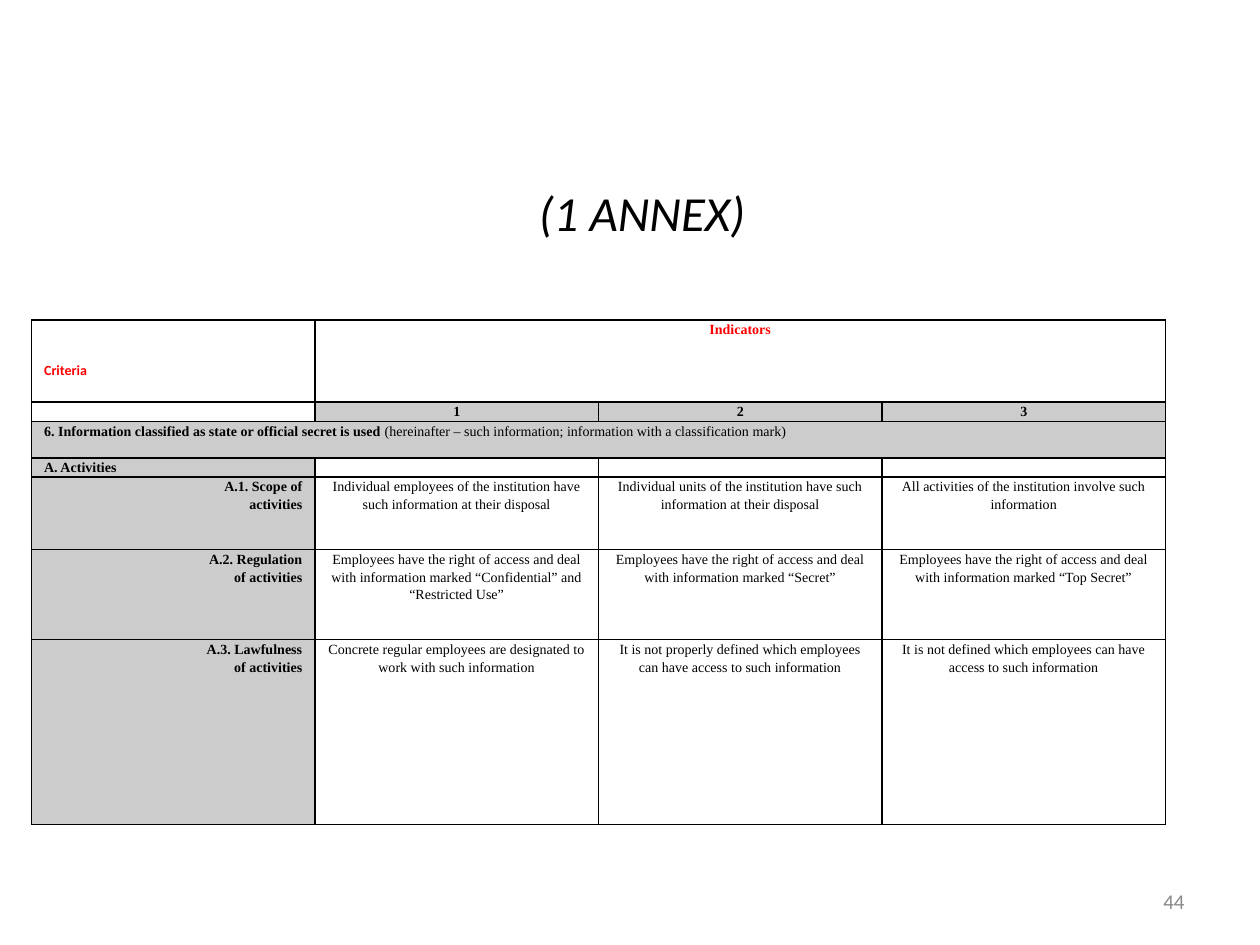
from lxml import etree
from pptx import Presentation
from pptx.dml.color import RGBColor
from pptx.enum.text import MSO_ANCHOR, PP_ALIGN
from pptx.oxml.ns import qn
from pptx.util import Pt

LEFT, CENTER, RIGHT = PP_ALIGN.LEFT, PP_ALIGN.CENTER, PP_ALIGN.RIGHT
MIDDLE = MSO_ANCHOR.MIDDLE
COLORS = {"text": "000000", "heading": "FF0000", "band": "CCCCCC", "number": "898989"}
SERIF, SANS = "Times New Roman", "Calibri"
CELL_SIZE = 8
CRITERIA_DROP = 22.5
COLUMN_WIDTH = 162
ROW_HEIGHTS = [46.8, 10.2, 20.9, 10.2, 41.3, 51.6, 105.7]
FIRST_ACTIVITY_ROW = 4

SECTION = "6. Information classified as state or official secret is used "
SECTION_NOTE = "(hereinafter – such information; information with a classification mark)"
ACTIVITIES = [
    (["A.1. Scope of", "activities"],
     "Individual employees of the institution have such information at their disposal",
     "Individual units of the institution have such information at their disposal",
     "All activities of the institution involve such information"),
    (["A.2. Regulation", "of activities"],
     "Employees have the right of access and deal with information marked "
     "“Confidential” and “Restricted Use”",
     "Employees have the right of access and deal with information marked “Secret”",
     "Employees have the right of access and deal with information marked “Top Secret”"),
    (["A.3. Lawfulness", "of activities"],
     "Concrete regular employees are designated to work with such information",
     "It is not properly defined which employees can have access to such information",
     "It is not defined which employees can have access to such information"),
]


def rgb(name):
    return RGBColor.from_string(COLORS[name])


def write(paragraph, text, font=SERIF, size=CELL_SIZE, color="text",
          bold=False, italic=False, align=LEFT, spacing=None):
    """Append a formatted run to the paragraph."""
    run = paragraph.add_run()
    run.text = text
    run.font.name = font
    run.font.size = Pt(size)
    run.font.bold = bold
    run.font.italic = italic
    run.font.color.rgb = rgb(color)
    paragraph.alignment = align
    if spacing:
        paragraph.line_spacing = spacing


def write_cell(cell, *lines, **style):
    frame = cell.text_frame
    for index, line in enumerate(lines):
        paragraph = frame.add_paragraph() if index else frame.paragraphs[0]
        write(paragraph, line, spacing=1.15, **style)


def shade(cell):
    cell.fill.solid()
    cell.fill.fore_color.rgb = rgb("band")


def prepare_cell(cell):
    """Give the cell its margins, black borders, no fill and a small empty line."""
    cell.margin_left = cell.margin_right = Pt(7.2)
    cell.margin_top = cell.margin_bottom = Pt(0)
    properties = cell._tc.get_or_add_tcPr()
    for side in ("a:lnL", "a:lnR", "a:lnT", "a:lnB"):
        border = etree.SubElement(properties, qn(side), w=str(Pt(1)))
        fill = etree.SubElement(border, qn("a:solidFill"))
        etree.SubElement(fill, qn("a:srgbClr"), val=COLORS["text"])
    cell.fill.background()
    etree.SubElement(cell.text_frame.paragraphs[0]._p, qn("a:endParaRPr"),
                     sz=str(CELL_SIZE * 100))


def add_grid(slide):
    rows, columns = len(ROW_HEIGHTS), 4
    grid = slide.shapes.add_table(rows, columns, Pt(18), Pt(182.9),
                                  Pt(columns * COLUMN_WIDTH), Pt(sum(ROW_HEIGHTS))).table
    grid.first_row = grid.horz_banding = False
    for column in grid.columns:
        column.width = Pt(COLUMN_WIDTH)
    for row, height in zip(grid.rows, ROW_HEIGHTS):
        row.height = Pt(height)
    for cell in grid.iter_cells():
        prepare_cell(cell)
    return grid


def fill_headings(grid):
    criteria = grid.cell(0, 0)
    criteria.margin_top = Pt(CRITERIA_DROP)
    write_cell(criteria, "Criteria", font=SANS, color="heading", bold=True)

    indicators = grid.cell(0, 1)
    indicators.merge(grid.cell(0, 3))
    write_cell(indicators, "Indicators", color="heading", bold=True, align=CENTER)
    for level in (1, 2, 3):
        write_cell(grid.cell(1, level), str(level), bold=True, align=CENTER)
        shade(grid.cell(1, level))

    section = grid.cell(2, 0)
    section.merge(grid.cell(2, 3))
    write_cell(section, SECTION, bold=True)
    write(section.text_frame.paragraphs[0], SECTION_NOTE)
    shade(section)

    write_cell(grid.cell(3, 0), "A. Activities", bold=True)
    shade(grid.cell(3, 0))


def fill_activities(grid):
    for row, (criterion, *indicators) in enumerate(ACTIVITIES, FIRST_ACTIVITY_ROW):
        write_cell(grid.cell(row, 0), *criterion, bold=True, align=RIGHT)
        shade(grid.cell(row, 0))
        for level, indicator in enumerate(indicators, 1):
            write_cell(grid.cell(row, level), indicator, align=CENTER)


def add_title(slide):
    title = slide.shapes.title
    title.left, title.top, title.width, title.height = Pt(54), Pt(48.2), Pt(625.7), Pt(145.4)
    title.text_frame.vertical_anchor = MIDDLE
    write(title.text_frame.paragraphs[0], "(1 ANNEX)", font=SANS, size=28,
          italic=True, align=CENTER)


def add_page_number(slide):
    number = slide.shapes.add_textbox(Pt(516), Pt(500.5), Pt(168), Pt(28.8)).text_frame
    number.word_wrap = True
    number.vertical_anchor = MIDDLE
    write(number.paragraphs[0], "44", font=SANS, size=12, color="number", align=RIGHT)


def main():
    deck = Presentation()
    deck.slide_width, deck.slide_height = Pt(720), Pt(540)
    slide = deck.slides.add_slide(deck.slide_layouts[5])
    add_title(slide)
    add_page_number(slide)
    grid = add_grid(slide)
    fill_headings(grid)
    fill_activities(grid)
    deck.save("out.pptx")


if __name__ == "__main__":
    main()
